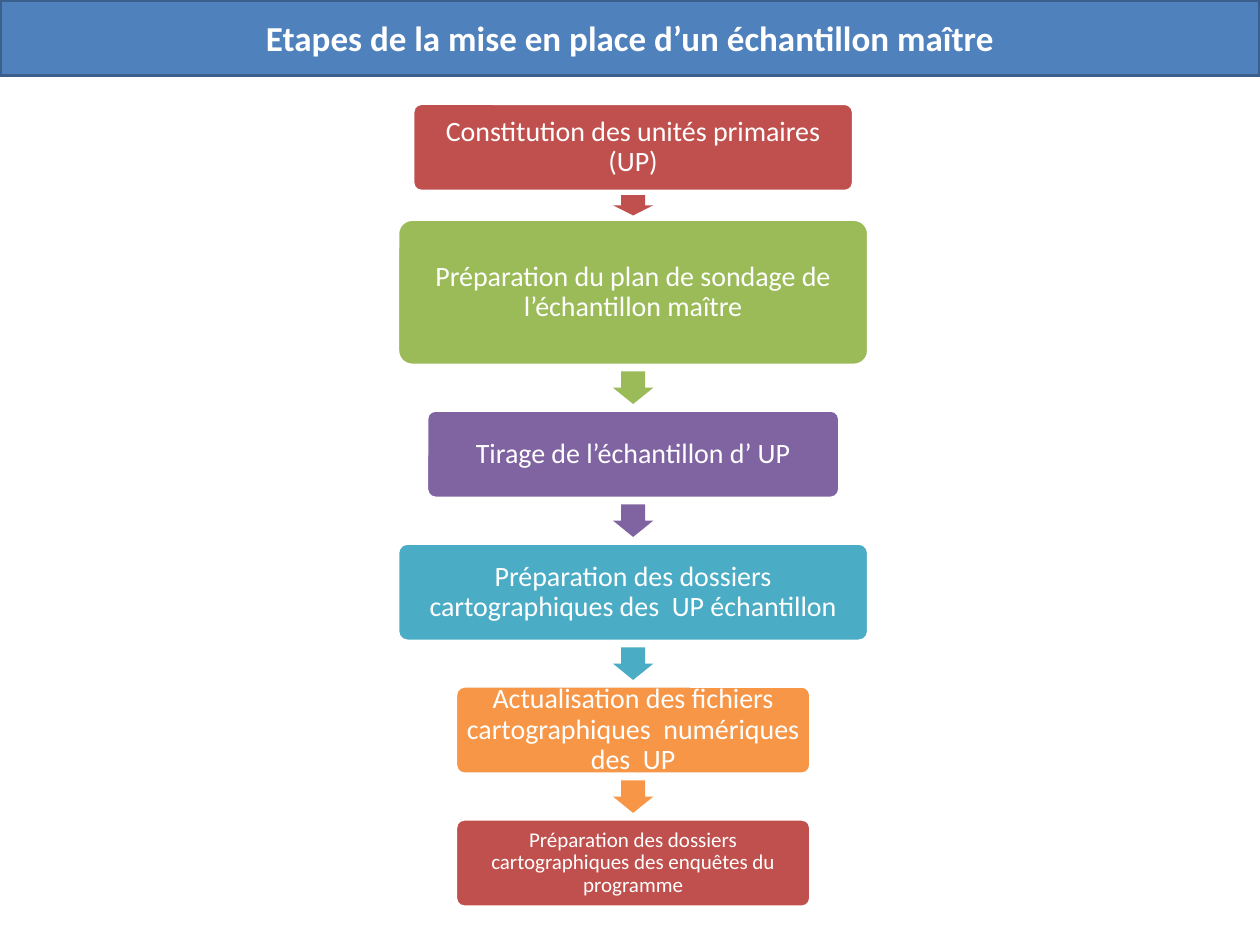
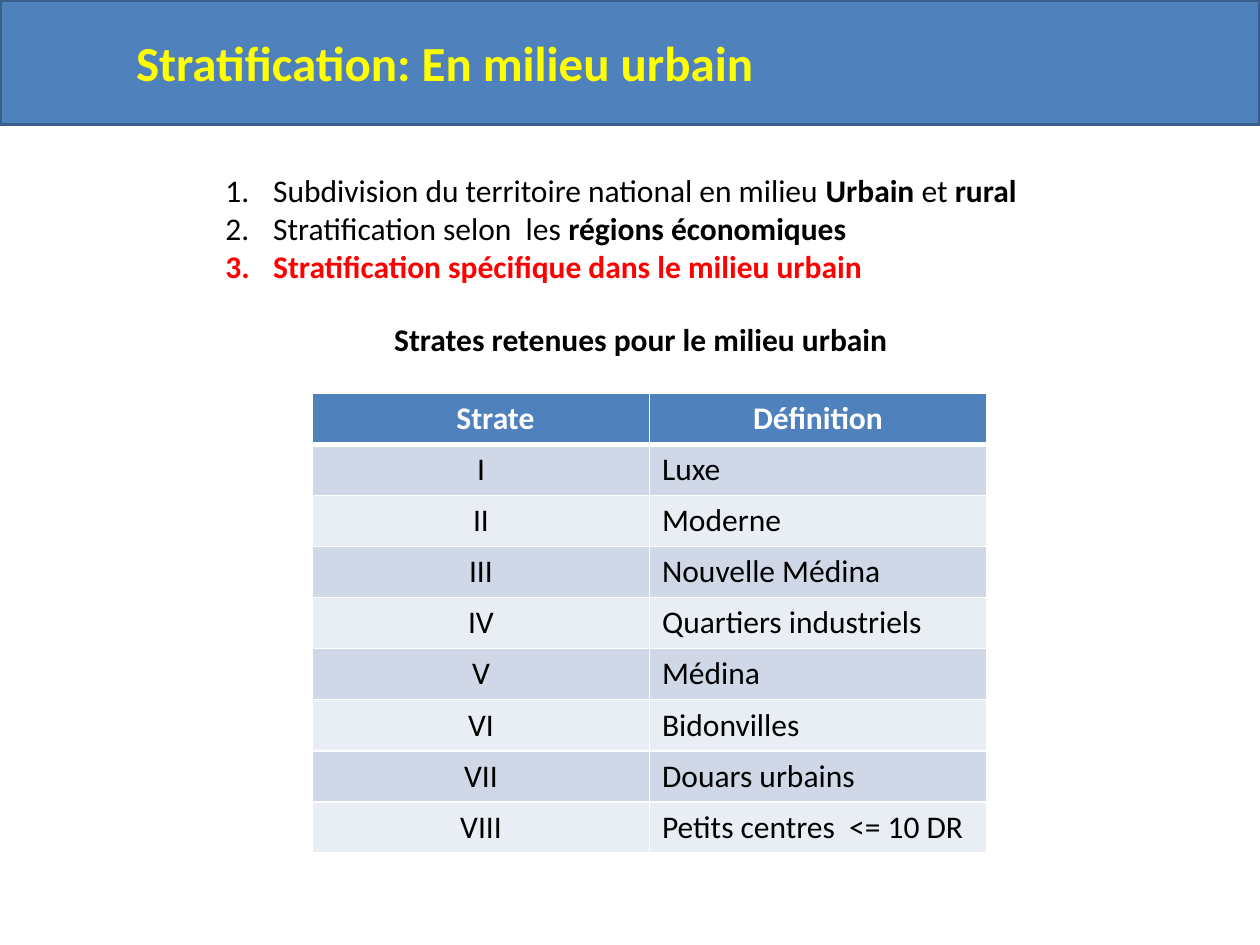
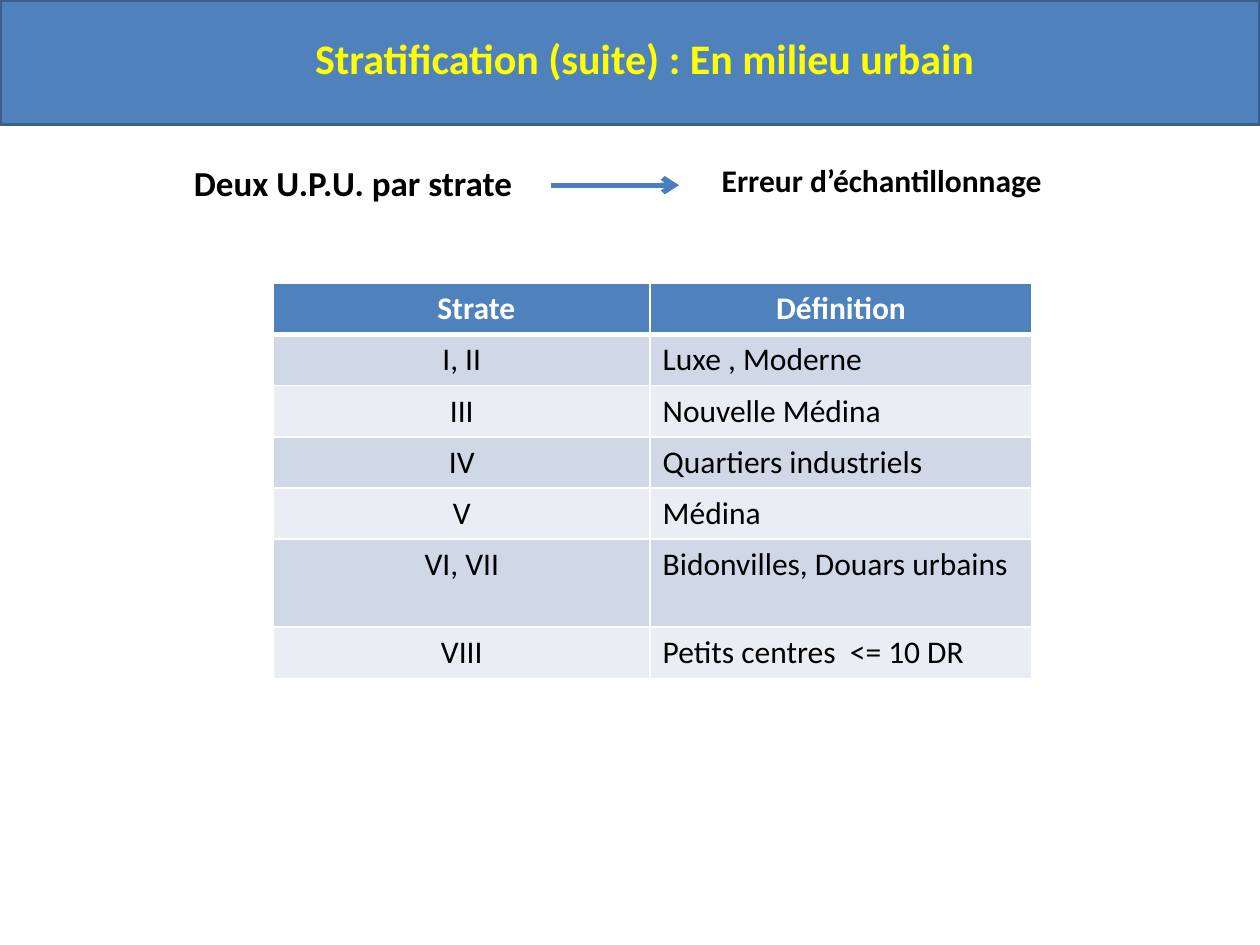
from lxml import etree
from pptx import Presentation
from pptx.dml.color import RGBColor
from pptx.enum.shapes import MSO_CONNECTOR, MSO_SHAPE
from pptx.enum.text import MSO_ANCHOR, MSO_AUTO_SIZE, PP_ALIGN
from pptx.oxml.ns import qn
from pptx.util import Inches, Pt

RECTANGLE = MSO_SHAPE.RECTANGLE
ROUNDED = MSO_SHAPE.ROUNDED_RECTANGLE
DOWN_ARROW = MSO_SHAPE.DOWN_ARROW
STRAIGHT = MSO_CONNECTOR.STRAIGHT
LEFT, CENTER = PP_ALIGN.LEFT, PP_ALIGN.CENTER
TOP, MIDDLE = MSO_ANCHOR.TOP, MSO_ANCHOR.MIDDLE
FIXED, GROW = MSO_AUTO_SIZE.NONE, MSO_AUTO_SIZE.SHAPE_TO_FIT_TEXT

COLUMNS, ROWS = 100, 75
FONT = "Calibri"
WHITE, BLACK, RED, YELLOW = "FFFFFF", "000000", "FF0000", "FFFF00"
BLUE, BLUE_EDGE, ARROW_BLUE = "4F81BD", "3A5F8C", "4B7EBC"
BANDS = ("D0D8E8", "E9EDF4")
BRICK, GREEN, PURPLE, TEAL, ORANGE = "C0504D", "9BBB59", "8064A2", "4BACC6", "F79646"
TABLE_ROW = 36.5 / 9
BOLD = {"bold": True}


def color(value):
    """Turn a hex string into a colour."""
    return RGBColor.from_string(value)


def paint(shape, fill, line=None, width=2):
    """Give a shape a flat fill and an optional outline."""
    shape.shadow.inherit = False
    shape.fill.solid()
    shape.fill.fore_color.rgb = color(fill)
    if line:
        shape.line.color.rgb = color(line)
        shape.line.width = Pt(width)
    else:
        shape.line.fill.background()


def write(frame, content, size=18, ink=BLACK, bold=False, align=LEFT, spacing=None, numbered=False):
    """Write a string, or paragraphs made of (text, overrides) runs, into a text frame."""
    paragraphs = [[(content, {})]] if isinstance(content, str) else content
    for index, runs in enumerate(paragraphs):
        paragraph = frame.add_paragraph() if index else frame.paragraphs[0]
        paragraph.alignment = align
        if spacing:
            paragraph.line_spacing = spacing
        if numbered:
            properties = paragraph._p.get_or_add_pPr()
            properties.set("marL", str(Inches(0.38)))
            properties.set("indent", str(-Inches(0.38)))
            etree.SubElement(properties, qn("a:buAutoNum"), type="arabicPeriod")
        for text, overrides in runs:
            run = paragraph.add_run()
            run.text = text
            run.font.name = FONT
            run.font.size = Pt(size)
            run.font.bold = overrides.get("bold", bold)
            run.font.color.rgb = color(overrides.get("ink", ink))


def border(cell, bottom):
    """Draw white borders around a table cell."""
    properties = cell._tc.get_or_add_tcPr()
    for side, width in (("L", 1), ("R", 1), ("T", 1), ("B", bottom)):
        line = etree.SubElement(properties, qn(f"a:ln{side}"), w=str(Pt(width)))
        fill = etree.SubElement(line, qn("a:solidFill"))
        etree.SubElement(fill, qn("a:srgbClr"), val=WHITE)


class Deck:
    """Hold the shared style and the current slide."""

    def __init__(self):
        """Start an empty presentation."""
        self.presentation = Presentation()
        self.presentation.slide_width = Inches(10)
        self.presentation.slide_height = Inches(7.5)
        self.slide = None

    def place(self, left, top, width, height):
        """Convert grid columns and rows into slide lengths."""
        column = self.presentation.slide_width / COLUMNS
        row = self.presentation.slide_height / ROWS
        return [round(length) for length in (left * column, top * row, width * column, height * row)]

    def add_slide(self, title, band_height, title_place=None, size=20, ink=WHITE):
        """Add a slide whose title is the band itself, or lies on the band."""
        self.slide = self.presentation.slides.add_slide(self.presentation.slide_layouts[5])
        band_place = (0, 0, COLUMNS, band_height)
        heading = self.slide.shapes.title
        position = self.place(*(title_place or band_place))
        heading.left, heading.top, heading.width, heading.height = position
        frame = heading.text_frame
        if title_place:
            band = self.shape(RECTANGLE, band_place, BLUE, BLUE_EDGE)
            heading._element.addprevious(band._element)
            frame.word_wrap, frame.auto_size, frame.vertical_anchor = False, GROW, TOP
        else:
            paint(heading, BLUE, BLUE_EDGE)
            frame.word_wrap, frame.auto_size, frame.vertical_anchor = True, FIXED, MIDDLE
        write(frame, title, size=size, ink=ink, bold=True, align=LEFT if title_place else CENTER)

    def shape(self, kind, place, fill, line=None, adjustments=()):
        """Add a preset shape."""
        shape = self.slide.shapes.add_shape(kind, *self.place(*place))
        paint(shape, fill, line)
        for index, value in enumerate(adjustments):
            shape.adjustments[index] = value
        return shape

    def text(self, content, place, wrap=False, **style):
        """Add a text box that grows with its text."""
        frame = self.slide.shapes.add_textbox(*self.place(*place)).text_frame
        frame.word_wrap = wrap
        frame.auto_size = GROW
        write(frame, content, **style)

    def arrow(self, left, right, row):
        """Add a horizontal line with an arrowhead at its right end."""
        start, level, length, _ = self.place(left, row, right - left, 0)
        connector = self.slide.shapes.add_connector(STRAIGHT, start, level, start + length, level)
        connector.line.color.rgb = color(ARROW_BLUE)
        connector.line.width = Pt(3)
        etree.SubElement(connector.line._get_or_add_ln(), qn("a:tailEnd"), type="arrow")
        etree.SubElement(connector._element.spPr, qn("a:effectLst"))

    def flow(self, steps, center, top, gaps):
        """Stack boxes around one axis, with an arrow in each gap."""
        for index, (label, width, height, fill, size, inset) in enumerate(steps):
            box = self.shape(ROUNDED, (center - width / 2, top, width, height), fill, WHITE, [0.1])
            frame = box.text_frame
            frame.word_wrap = True
            frame.vertical_anchor = MIDDLE
            frame.margin_left = frame.margin_right = Inches(inset)
            frame.margin_top = frame.margin_bottom = Inches(inset)
            write(frame, label, size=size, ink=WHITE, align=CENTER, spacing=0.9)
            top += height
            if index < len(gaps):
                gap = gaps[index]
                arrow_place = (center - 1.6, top + gap * 0.135, 3.2, gap * 0.73)
                self.shape(DOWN_ARROW, arrow_place, fill, adjustments=[0.6, 0.5])
                top += gap

    def strata(self, left, top, widths, strata, tall_rows=()):
        """Add a table of strata and their definitions."""
        records = [("Strate", "Définition"), *strata]
        heights = [7 if index in tall_rows else TABLE_ROW for index in range(len(records))]
        place = self.place(left, top, sum(widths), sum(heights))
        table = self.slide.shapes.add_table(len(records), len(widths), *place).table
        for column, width in zip(table.columns, widths):
            column.width = self.place(0, 0, width, 0)[2]
        for index, (record, height) in enumerate(zip(records, heights)):
            table.rows[index].height = self.place(0, 0, 0, height)[3]
            header = index == 0
            for position, label in enumerate(record):
                cell = table.cell(index, position)
                border(cell, 3 if header else 1)
                cell.fill.solid()
                cell.fill.fore_color.rgb = color(BLUE if header else BANDS[(index - 1) % 2])
                write(cell.text_frame, label, ink=WHITE if header else BLACK, bold=header,
                      align=CENTER if header or position == 0 else LEFT)
        table.cell(0, 0).margin_left = Inches(0.33)


def main():
    """Build the three slides."""
    deck = Deck()

    deck.add_slide("Etapes de la mise en place d’un échantillon maître", 6)
    deck.flow([
        ("Constitution des unités primaires (UP)", 35, 7, BRICK, 16, 0.05),
        ("Préparation du plan de sondage de l’échantillon maître", 37.4, 11.6, GREEN, 16, 0.05),
        ("Tirage de l’échantillon d’ UP", 32.8, 7, PURPLE, 16, 0.05),
        ("Préparation des dossiers cartographiques des  UP échantillon", 37.4, 7.8, TEAL, 16, 0.05),
        ("Actualisation des fichiers cartographiques  numériques des  UP", 28.2, 7, ORANGE, 16, 0.03),
        ("Préparation des dossiers cartographiques des enquêtes du programme", 28.2, 7, BRICK, 12, 0.03),
    ], center=50.25, top=8.2, gaps=[2.2] + [3.55] * 4)

    deck.add_slide("Stratification: En milieu urbain", 9.9, (9.8, 2.1, 53.1, 5.7), size=28, ink=YELLOW)
    deck.text("Strates retenues pour le milieu urbain", (30.3, 24.9, 41.5, 4), bold=True)
    deck.text([
        [("Subdivision du territoire national en milieu ", {}), ("Urbain", BOLD), (" et ", {}), ("rural", BOLD)],
        [("Stratification selon  les ", {}), ("régions économiques", BOLD)],
        [("Stratification spécifique dans le milieu urbain", {"bold": True, "ink": RED})],
    ], (16.9, 13.1, 65.5, 10.1), numbered=True)
    deck.strata(24.8, 31.2, (26.75, 26.75), [
        ("I", "Luxe"),
        ("II", "Moderne"),
        ("III", "Nouvelle Médina"),
        ("IV", "Quartiers industriels"),
        ("V", "Médina"),
        ("VI", "Bidonvilles"),
        ("VII", "Douars urbains"),
        ("VIII", "Petits centres  <= 10 DR"),
    ])

    deck.add_slide("Stratification (suite) : En milieu urbain", 9.9, (24, 2.1, 54.9, 5), size=24, ink=YELLOW)
    deck.text("Deux U.P.U. par strate", (14.4, 12.3, 41.1, 4.4), wrap=True, size=20, bold=True)
    deck.arrow(43.7, 53.9, 14.7)
    deck.text("Erreur d’échantillonnage", (56.3, 12.3, 27.6, 4), bold=True)
    deck.strata(21.7, 22.5, (29.9, 30.3), [
        ("I, II", "Luxe , Moderne"),
        ("III", "Nouvelle Médina"),
        ("IV", "Quartiers industriels"),
        ("V", "Médina"),
        ("VI, VII", "Bidonvilles, Douars urbains"),
        ("VIII", "Petits centres  <= 10 DR"),
    ], tall_rows=(5,))

    deck.presentation.save("out.pptx")


if __name__ == "__main__":
    main()
